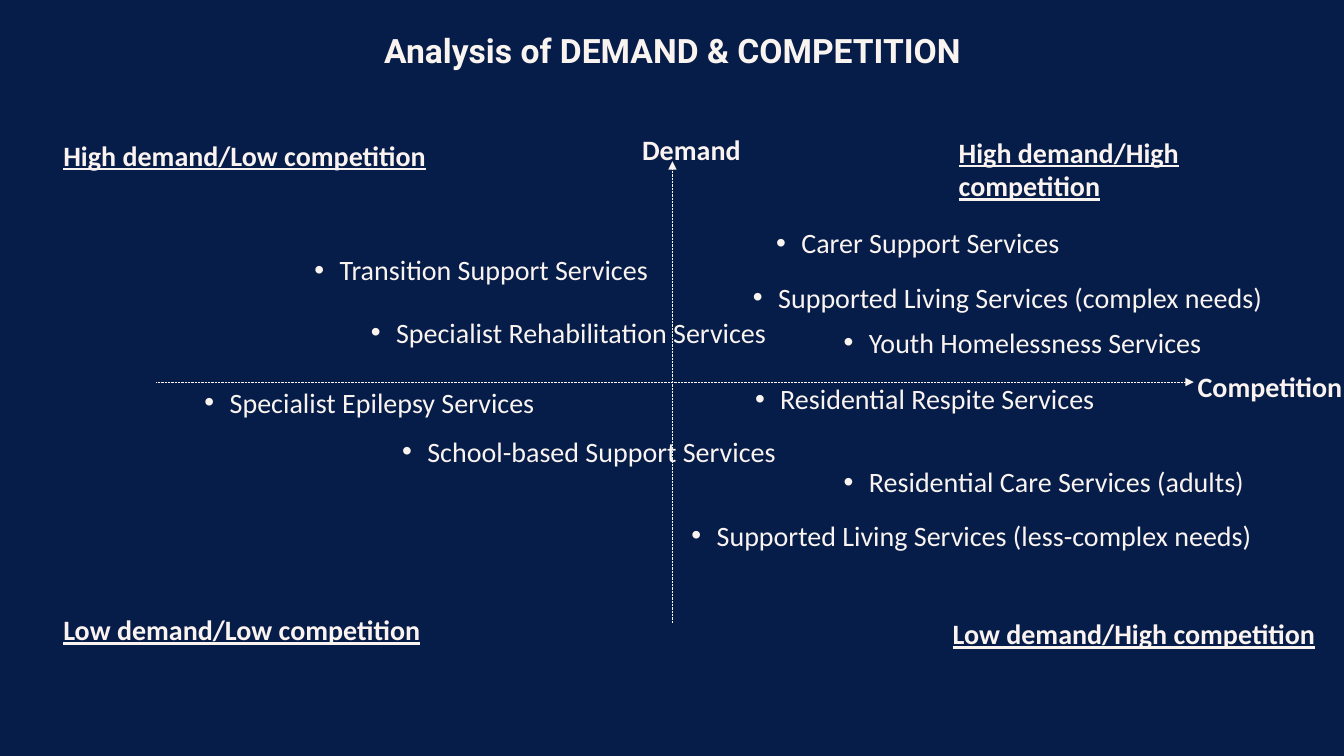
import pptx
import pptx.util
import pptx.dml.color
import pptx.enum.dml
import pptx.enum.shapes
import pptx.enum.text
import pptx.oxml.ns
from lxml import etree

Inches, Pt = pptx.util.Inches, pptx.util.Pt

# Content: text, left, top, width
TITLE = "Analysis of DEMAND & COMPETITION"
QUADRANTS = [
    ("High demand/Low competition", 0.53, 1.29, 3.8),
    ("High demand/High competition", 9.41, 1.26, 2.79),
    ("Low demand/Low competition", 0.53, 6.0, 3.8),
    ("Low demand/High competition", 9.35, 6.04, 3.8),
]
AXIS_LABELS = [
    ("Demand", 6.27, 1.23, 1.33),
    ("Competition", 11.78, 3.59, 1.55),
]
SERVICES = [
    ("Transition Support Services", 3.02, 2.43, 3.6),
    ("Specialist Rehabilitation Services", 3.58, 3.05, 4.2),
    ("Carer Support Services", 7.6, 2.16, 3.03),
    ("Supported Living Services (complex needs)", 7.37, 2.7, 5.3),
    ("Youth Homelessness Services", 8.27, 3.15, 3.8),
    ("Specialist Epilepsy Services", 1.93, 3.74, 3.5),
    ("School-based Support Services", 3.89, 4.23, 4.0),
    ("Residential Respite Services", 7.39, 3.71, 3.6),
    ("Residential Care Services (adults)", 8.27, 4.53, 4.2),
    ("Supported Living Services (less-complex needs)", 6.76, 5.06, 5.8),
]
AXES = [(1.55, 3.79, 11.84, 3.79), (6.67, 6.18, 6.67, 1.6)]
NAVY, CREAM, LIGHT = "071D49", "FAF3F0", "FAF4F0"


def rgb(value):
    return pptx.dml.color.RGBColor.from_string(value)


def add_xml(parent, tag, **attrs):
    return etree.SubElement(parent, pptx.oxml.ns.qn(tag), **attrs)


def style(p, size, name, color, bold=False, underline=False):
    for r in p.runs:
        r.font.size, r.font.name = Pt(size), name
        r.font.bold, r.font.underline = bold, underline
        r.font.color.rgb = rgb(color)


def add_label(text, left, top, width, color=CREAM, bold=True,
              underline=False, bullet=False):
    sp = slide.shapes.add_textbox(Inches(left), Inches(top),
                                  Inches(width), Inches(0.46))
    tf = sp.text_frame
    tf.word_wrap = True
    tf.margin_left, tf.margin_right = Inches(0.1), 0
    tf.margin_top = tf.margin_bottom = Inches(0.08)
    p = tf.paragraphs[0]
    p.text = text
    if bullet:
        pPr = p._p.get_or_add_pPr()
        pPr.set("marL", str(Inches(0.25)))
        pPr.set("indent", str(-Inches(0.25)))
        add_xml(pPr, "a:buFont", typeface="Arial")
        add_xml(pPr, "a:buChar", char="•")
    style(p, 20, "Calibri", color, bold, underline)


def add_axis(x1, y1, x2, y2):
    line = slide.shapes.add_connector(
        pptx.enum.shapes.MSO_CONNECTOR.STRAIGHT,
        Inches(x1), Inches(y1), Inches(x2), Inches(y2))
    line.line.color.rgb = rgb(CREAM)
    line.line.width = Pt(0.5)
    line.line.dash_style = pptx.enum.dml.MSO_LINE.ROUND_DOT
    add_xml(line.line._get_or_add_ln(), "a:tailEnd", type="triangle")
    add_xml(line._element.spPr, "a:effectLst")


# Slide and background
prs = pptx.Presentation()
prs.slide_width, prs.slide_height = Inches(13.33), Inches(7.5)
slide = prs.slides.add_slide(prs.slide_layouts[5])
slide.background.fill.solid()
slide.background.fill.fore_color.rgb = rgb(NAVY)

# Title
title = slide.shapes.title
title.left, title.top = Inches(1.08), Inches(0.29)
title.width, title.height = Inches(11.18), Inches(1.06)
tf = title.text_frame
tf.text = TITLE
tf.vertical_anchor = pptx.enum.text.MSO_ANCHOR.TOP
p = tf.paragraphs[0]
p.alignment = pptx.enum.text.PP_ALIGN.CENTER
p.line_spacing = 0.9
style(p, 24, "Roboto", LIGHT, bold=True)

# Axes and their names
for axis in AXES:
    add_axis(*axis)
for label in AXIS_LABELS:
    add_label(*label)

# Quadrant headings and the services placed in them
for heading in QUADRANTS:
    add_label(*heading, underline=True)
for service in SERVICES:
    add_label(*service, color=LIGHT, bold=False, bullet=True)

prs.save("out.pptx")
